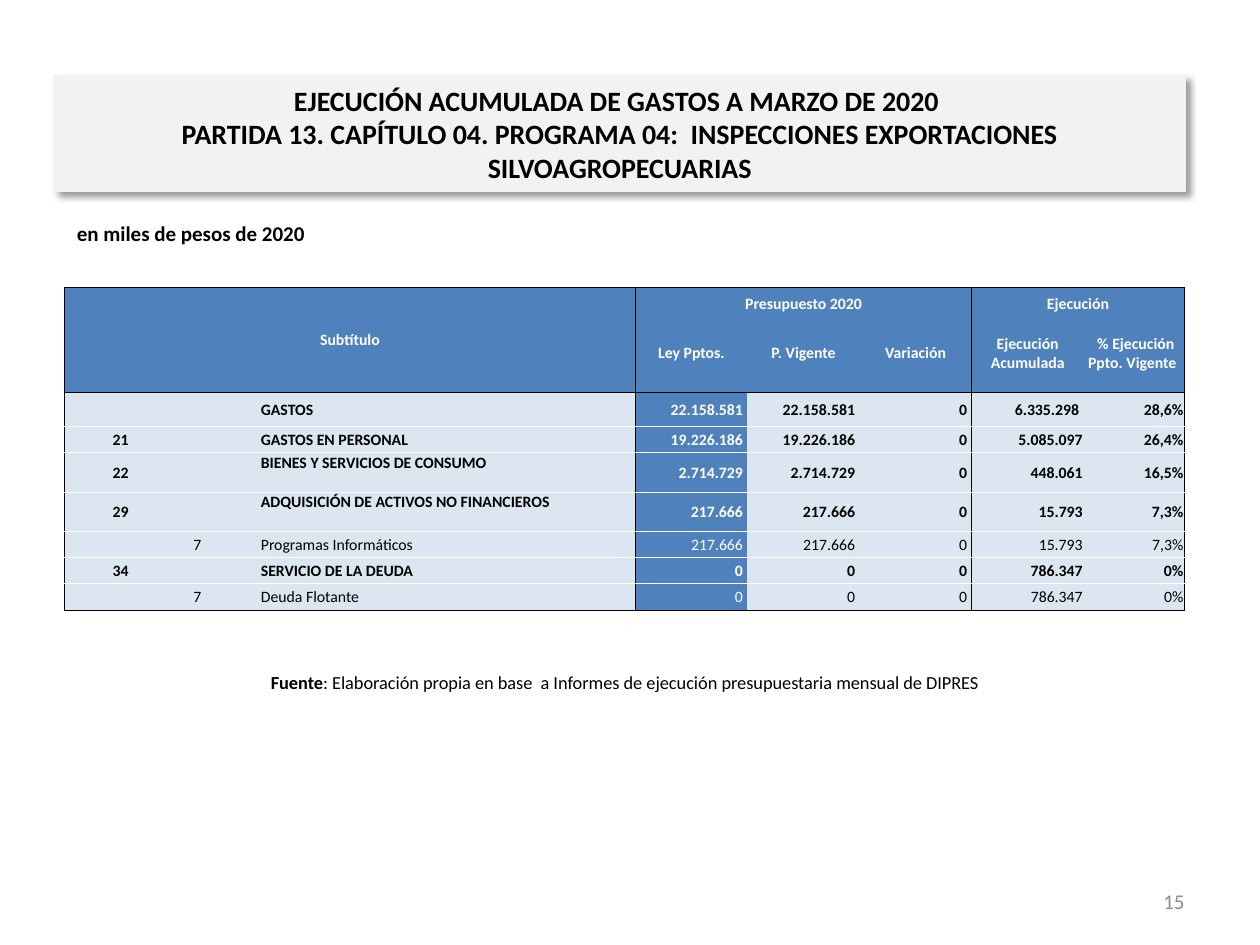
from dataclasses import dataclass

from lxml.etree import SubElement
from pptx import Presentation
from pptx.dml.color import RGBColor as Rgb
from pptx.enum.text import MSO_ANCHOR as Anchor, MSO_AUTO_SIZE as Auto, PP_ALIGN as Align
from pptx.oxml.ns import qn
from pptx.util import Cm, Pt

HUE = {
    "ink": "000000", "white": "FFFFFF", "blue": "4F81BD",
    "pale": "DCE6F1", "panel": "F2F2F2", "gray": "8C8C8C",
}
FONT = "Calibri"
WIDTHS = [2.26, 0.84, 0.84, 7.57, 2.26, 2.26, 2.26, 2.26, 2.03]
HEAD = [0.53, 1.59]
LAW = 4  # column of the approved budget
LABEL = 3
EDGES = (0, 4, 7, 9)  # column edges ruled in black


@dataclass
class Line:
    code: str
    item: str
    name: str
    sums: tuple
    tall: float = 0.53
    anchor: Anchor = Anchor.MIDDLE

    @property
    def bold(self) -> bool:
        return not self.item

    @property
    def cells(self) -> list:
        return [self.code, self.item, "", self.name, *self.sums]


@dataclass
class Note:
    text: str
    box: tuple
    size: float
    hue: str = "ink"
    align: Align = Align.LEFT
    anchor: Anchor = Anchor.MIDDLE
    bold: bool = False


GROUPS = [(0, 2, 4, "Subtítulo"), (4, 1, 3, "Presupuesto 2020"), (7, 1, 2, "Ejecución")]
HEADS = ["Ley Pptos.", "P. Vigente", "Variación",
         "Ejecución Acumulada", " % Ejecución Ppto. Vigente "]
LINES = [
    Line("", "", "GASTOS",
         ("22.158.581 ", "22.158.581 ", "0 ", "6.335.298 ", "28,6%"), 0.69),
    Line("21", "", "GASTOS EN PERSONAL",
         ("19.226.186 ", "19.226.186 ", "0 ", "5.085.097", "26,4%")),
    Line("22", "", "BIENES Y SERVICIOS DE CONSUMO",
         ("2.714.729 ", "2.714.729 ", "0 ", "448.061", "16,5%"), 0.79, Anchor.TOP),
    Line("29", "", "ADQUISICIÓN DE ACTIVOS NO FINANCIEROS",
         ("217.666 ", "217.666 ", "0 ", "15.793", "7,3%"), 0.79, Anchor.TOP),
    Line("", "7", "Programas Informáticos",
         ("217.666 ", "217.666 ", "0 ", "15.793", "7,3%")),
    Line("34", "", "SERVICIO DE LA DEUDA", ("0 ", "0 ", "0 ", "786.347", "0%")),
    Line("", "7", "Deuda Flotante", ("0 ", "0 ", "0 ", "786.347", "0%")),
]
NOTES = [
    Note("Fuente: Elaboración propia en base  a Informes de ejecución "
         "presupuestaria mensual de DIPRES",
         (1.3, 13.39, 22.6, 0.74), 10.5, align=Align.CENTER),
    Note("15", (18.21, 17.65, 5.92, 1.02), 12, "gray", Align.RIGHT),
    Note("en miles de pesos de 2020", (1.3, 4.32, 20.83, 0.99), 12,
         anchor=Anchor.TOP, bold=True),
]


def style(par, size: float, hue: str, bold: bool, align: Align) -> None:
    par.alignment = align
    for run in par.runs:
        run.font.name, run.font.size, run.font.bold = FONT, Pt(size), bold
        run.font.color.rgb = Rgb.from_string(HUE[hue])


def place(shape, box: tuple) -> None:
    shape.left, shape.top, shape.width, shape.height = map(Cm, box)


def add_title(slide) -> None:
    title = slide.shapes.title
    place(title, (1.09, 1.52, 22.81, 2.34))
    for part in (title.fill, title.line.fill):
        part.solid()
        part.fore_color.rgb = Rgb.from_string(HUE["panel"])
    title.line.width = Pt(0.75)
    frame = title.text_frame
    frame.text = ("EJECUCIÓN ACUMULADA DE GASTOS A MARZO DE 2020 \v"
                  "PARTIDA 13. CAPÍTULO 04. PROGRAMA 04:  "
                  "INSPECCIONES EXPORTACIONES SILVOAGROPECUARIAS")
    frame.word_wrap, frame.auto_size = True, Auto.NONE
    frame.vertical_anchor = Anchor.MIDDLE
    style(frame.paragraphs[0], 16, "ink", True, Align.CENTER)
    glow = SubElement(title._element.spPr, qn("a:effectLst"))
    cast = SubElement(glow, qn("a:outerShdw"), blurRad=str(Pt(4)), dist=str(Pt(3)),
                      dir="2700000", algn="tl", rotWithShape="0")
    tint = SubElement(cast, qn("a:srgbClr"), val=HUE["ink"])
    SubElement(tint, qn("a:alpha"), val="40000")


def add_note(slide, note: Note) -> None:
    frame = slide.shapes.add_textbox(*map(Cm, note.box)).text_frame
    frame.word_wrap = True
    frame.vertical_anchor = note.anchor
    par = frame.paragraphs[0]
    lead, mark, rest = note.text.partition(":")
    par.text = lead
    if mark:
        par.add_run().text = mark + rest
    style(par, note.size, note.hue, note.bold, note.align)
    if mark:
        par.runs[0].font.bold = True


def rule(cell, side: str, hue: str) -> None:
    """Draw one cell edge, or clear it when no colour is given."""
    edge = SubElement(cell._tc.get_or_add_tcPr(), qn("a:ln" + side), w=str(Pt(0.5)))
    if hue:
        fill = SubElement(edge, qn("a:solidFill"))
        SubElement(fill, qn("a:srgbClr"), val=HUE[hue])
    else:
        SubElement(edge, qn("a:noFill"))


def dress(cell, row: int, col: int, last: int) -> None:
    """Set the edges, fill and margins of a cell."""
    def across(pos: int) -> str:
        return "ink" if pos in (0, len(HEAD), last) else "white" if pos > 1 else ""

    def down(pos: int) -> str:
        return "ink" if pos in EDGES else ""

    rule(cell, "L", down(col))
    rule(cell, "R", down(col + cell.span_width))
    rule(cell, "T", across(row))
    rule(cell, "B", across(row + cell.span_height))
    cell.fill.solid()
    dark = row < len(HEAD) or col == LAW
    cell.fill.fore_color.rgb = Rgb.from_string(HUE["blue" if dark else "pale"])
    cell.margin_left = cell.margin_right = cell.margin_top = Cm(0.02)
    cell.margin_bottom = 0


def write(cell, text: str, hue: str, bold: bool, align: Align, anchor: Anchor) -> None:
    par = cell.text_frame.paragraphs[0]
    par.text = text
    style(par, 9, hue, bold, align)
    cell.vertical_anchor = anchor


def add_grid(slide) -> None:
    tall = HEAD + [line.tall for line in LINES]
    grid = slide.shapes.add_table(len(tall), len(WIDTHS), Cm(1.3), Cm(5.79),
                                  Cm(sum(WIDTHS)), Cm(sum(tall))).table
    grid.first_row = grid.horz_banding = False
    for col, wide in zip(grid.columns, WIDTHS):
        col.width = Cm(wide)
    for row, high in zip(grid.rows, tall):
        row.height = Cm(high)

    for col, rows, cols, text in GROUPS:
        cell = grid.cell(0, col)
        cell.merge(grid.cell(rows - 1, col + cols - 1))
        write(cell, text, "white", True, Align.CENTER,
              Anchor.MIDDLE if rows > 1 else Anchor.BOTTOM)
    for col, text in enumerate(HEADS, LAW):
        write(grid.cell(1, col), text, "white", True, Align.CENTER, Anchor.MIDDLE)
    for row, line in enumerate(LINES, len(HEAD)):
        for col, text in enumerate(line.cells):
            align = (Align.CENTER if col < LABEL else
                     Align.LEFT if col == LABEL else Align.RIGHT)
            write(grid.cell(row, col), text, "white" if col == LAW else "ink", line.bold,
                  align, line.anchor if col == LABEL else Anchor.MIDDLE)

    for row in range(len(tall)):
        for col in range(len(WIDTHS)):
            cell = grid.cell(row, col)
            dress(cell, row, col, len(tall))
            if not cell.text_frame.text:
                SubElement(cell.text_frame.paragraphs[0]._p, qn("a:endParaRPr"), sz="900")


def main() -> None:
    deck = Presentation()
    deck.slide_width, deck.slide_height = Cm(25.4), Cm(19.05)
    slide = deck.slides.add_slide(deck.slide_layouts[5])
    for note in NOTES:
        add_note(slide, note)
    add_title(slide)
    add_grid(slide)
    deck.save("out.pptx")


if __name__ == "__main__":
    main()
